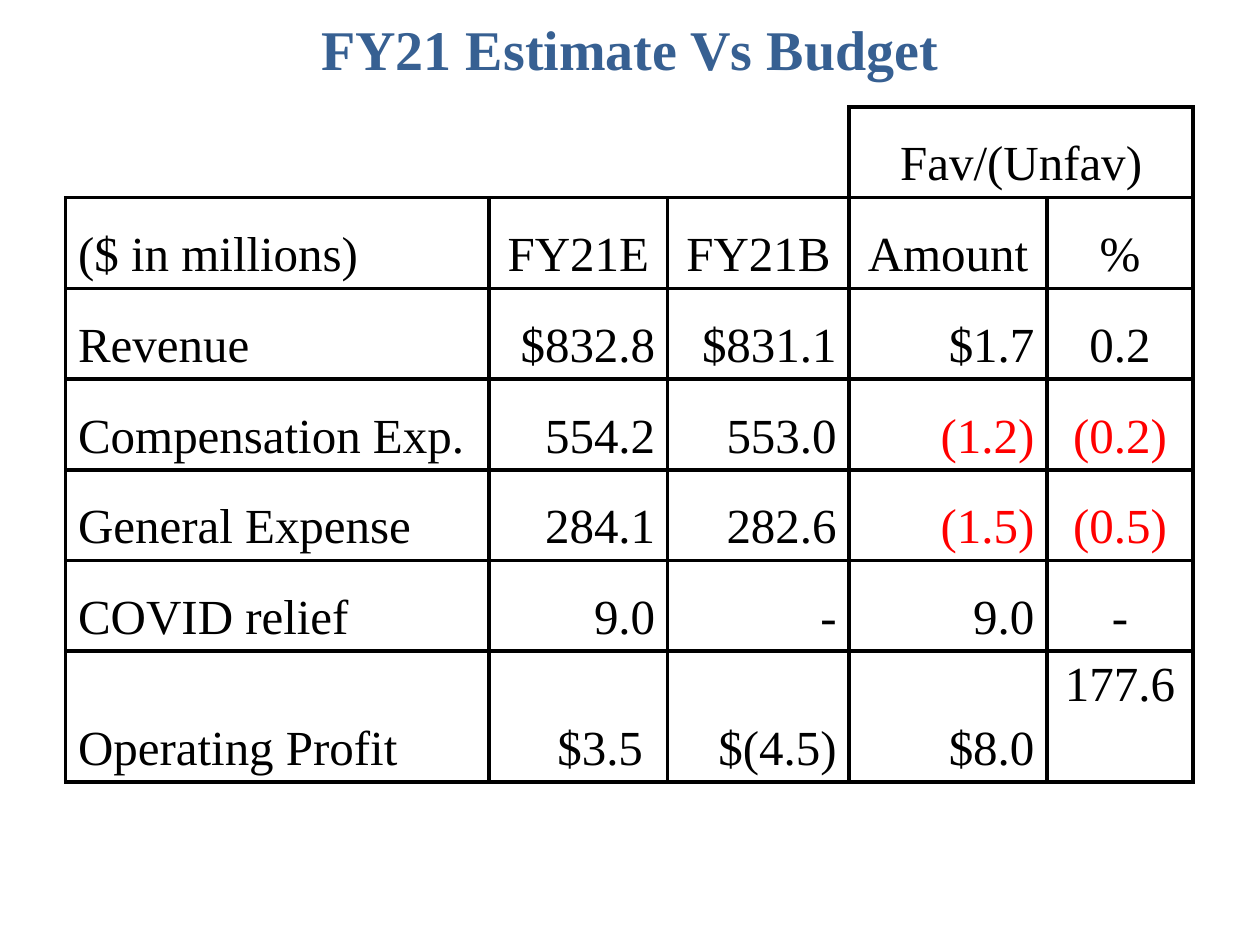
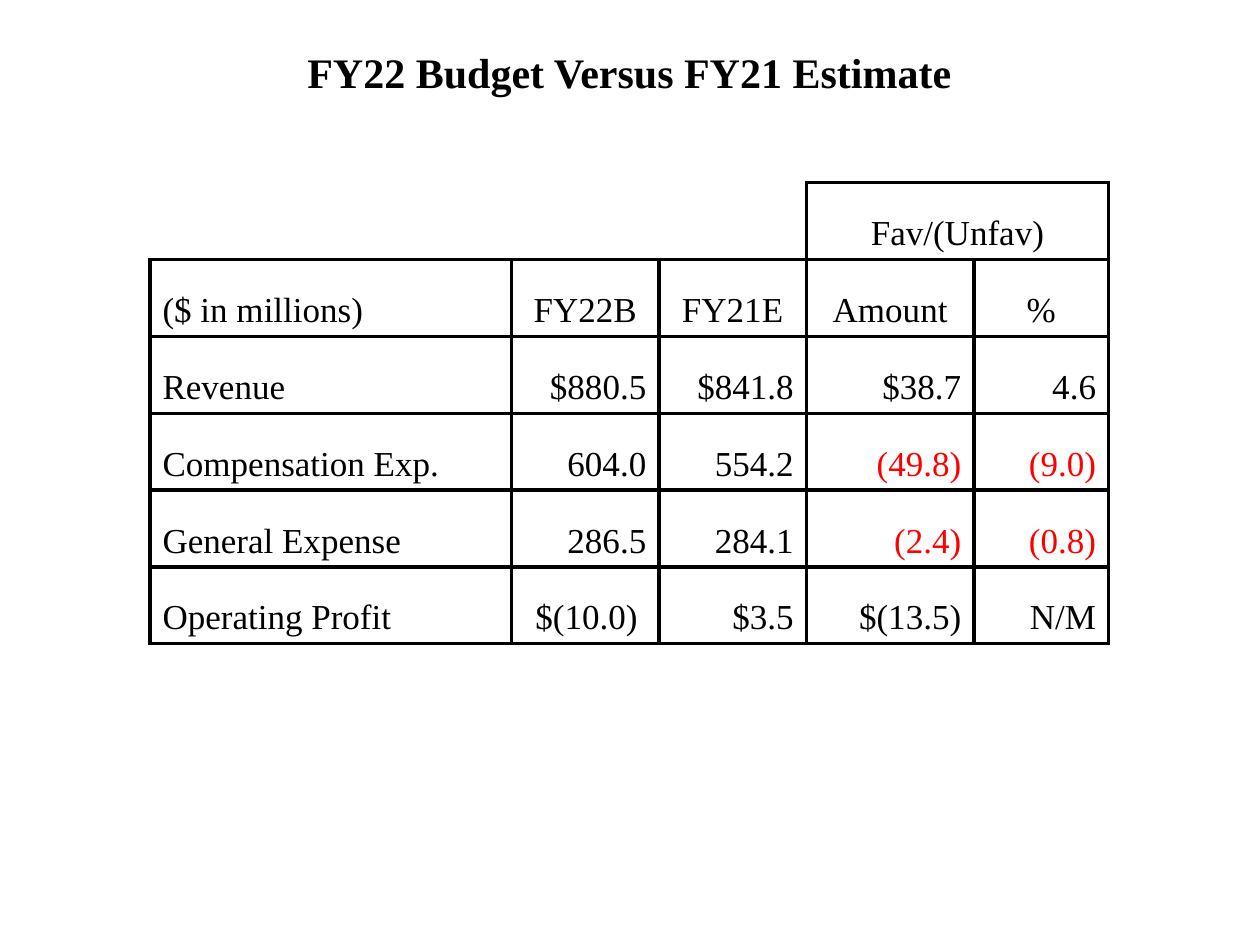
from lxml import etree
from pptx import Presentation
from pptx.dml.color import RGBColor
from pptx.enum.text import MSO_ANCHOR, MSO_AUTO_SIZE, PP_ALIGN
from pptx.oxml.ns import qn
from pptx.util import Inches, Pt

LEFT, CENTER, RIGHT = PP_ALIGN.LEFT, PP_ALIGN.CENTER, PP_ALIGN.RIGHT
TOP, MIDDLE, BOTTOM = MSO_ANCHOR.TOP, MSO_ANCHOR.MIDDLE, MSO_ANCHOR.BOTTOM
NO_AUTOFIT = MSO_AUTO_SIZE.NONE

COLORS = {"blue": "376092", "black": "000000", "red": "FF0000"}
FONT = "Times New Roman"
BORDER = Pt(2.25)
TITLE_ONLY = 5
HEADER_ROWS = 2
VARIANCE_COL = 3  # first column under the Fav/(Unfav) heading
HEADING = ["", "", "", "Fav/(Unfav)", ""]


def set_attributes(target, values):
    for name, value in values.items():
        setattr(target, name, value)


def write_text(frame, text, size, color, align, bold=False):
    para = frame.paragraphs[0]
    para.alignment = align
    span = para.add_run()
    span.text = text
    set_attributes(span.font, {"name": FONT, "size": Pt(size), "bold": bold})
    span.font.color.rgb = RGBColor.from_string(COLORS[color])


def add_title(page, text, box, size, color):
    title = page.shapes.title
    left, top, width, height = map(Inches, box)
    set_attributes(title, {"left": left, "top": top, "width": width, "height": height})
    frame = title.text_frame
    set_attributes(frame, {"word_wrap": False, "auto_size": NO_AUTOFIT,
                           "vertical_anchor": MIDDLE})
    write_text(frame, text, size, color, CENTER, bold=True)


def set_borders(cell, visible_sides):
    """Draw the named sides (L, R, T, B) and clear the others."""
    properties = cell._tc.get_or_add_tcPr()
    for side in "LRTB":
        line = etree.SubElement(properties, qn(f"a:ln{side}"), w=str(BORDER))
        if side in visible_sides:
            fill = etree.SubElement(line, qn("a:solidFill"))
            etree.SubElement(fill, qn("a:srgbClr"), val=COLORS["black"])
        else:
            etree.SubElement(line, qn("a:noFill"))


def visible_sides(row, col):
    """The corner left of the variance heading shows only its inner edges."""
    if row > 0 or col >= VARIANCE_COL:
        return "LRTB"
    return "RB" if col == VARIANCE_COL - 1 else "B"


def add_budget_table(page, rows, origin, col_widths, row_heights, size, percent_align):
    rows = [HEADING] + rows
    left, top = map(Inches, origin)
    holder = page.shapes.add_table(len(rows), len(col_widths), left, top,
                                   Inches(sum(col_widths)), Inches(sum(row_heights)))
    table = holder.table
    set_attributes(table, {"first_row": False, "horz_banding": False})
    for column, width in zip(table.columns, col_widths):
        column.width = Inches(width)
    for table_row, height in zip(table.rows, row_heights):
        table_row.height = Inches(height)

    aligns = [LEFT, RIGHT, RIGHT, RIGHT, percent_align]
    for row, texts in enumerate(rows):
        for col, text in enumerate(texts):
            cell = table.cell(row, col)
            set_borders(cell, visible_sides(row, col))
            cell.fill.background()
            cell.vertical_anchor = BOTTOM
            if text:
                unfavorable = col >= VARIANCE_COL and text.startswith("(")
                align = CENTER if row < HEADER_ROWS and col > 0 else aligns[col]
                write_text(cell.text_frame, text, size,
                           "red" if unfavorable else "black", align)
    table.cell(0, VARIANCE_COL).merge(table.cell(0, VARIANCE_COL + 1))

    # The first operating profit figure sits one space in from the edge
    table.cell(len(rows) - 1, 1).margin_right = Inches(0.1) + Pt(size / 4)
    return table


def build_estimate_page(deck):
    page = deck.slides.add_slide(deck.slide_layouts[TITLE_ONLY])
    add_title(page, "FY21 Estimate Vs Budget", (2.43, 0.06, 5.14, 0.64), 32, "blue")
    rows = [
        ["($ in millions)", "FY21E", "FY21B", "Amount", "%"],
        ["Revenue", "$832.8", "$831.1", "$1.7", "0.2"],
        ["Compensation Exp.", "554.2", "553.0", "(1.2)", "(0.2)"],
        ["General Expense", "284.1", "282.6", "(1.5)", "(0.5)"],
        ["COVID relief", "9.0", "-", "9.0", "-"],
        ["Operating Profit", "$3.5", "$(4.5)", "$8.0", "177.6"],
    ]
    table = add_budget_table(page, rows, (0.52, 0.85), [3.36, 1.42, 1.44, 1.57, 1.16],
                             [0.72] * len(rows) + [1.04], 28, CENTER)
    table.cell(len(rows), 4).vertical_anchor = TOP


def build_budget_page(deck):
    page = deck.slides.add_slide(deck.slide_layouts[TITLE_ONLY])
    add_title(page, "FY22 Budget Versus FY21 Estimate", (2.23, 0.32, 5.53, 0.5),
              24, "black")
    rows = [
        ["($ in millions)", "FY22B", "FY21E", "Amount", "%"],
        ["Revenue", "$880.5", "$841.8", "$38.7", "4.6"],
        ["Compensation Exp.", "604.0", "554.2", "(49.8)", "(9.0)"],
        ["General Expense", "286.5", "284.1", "(2.4)", "(0.8)"],
        ["Operating Profit", "$(10.0)", "$3.5", "$(13.5)", "N/M"],
    ]
    add_budget_table(page, rows, (1.19, 1.45), [2.87, 1.17, 1.17, 1.33, 1.07],
                     [0.61] * (len(rows) + 1), 20, RIGHT)


def main():
    deck = Presentation()
    set_attributes(deck, {"slide_width": Inches(10), "slide_height": Inches(7.5)})
    build_estimate_page(deck)
    build_budget_page(deck)
    deck.save("out.pptx")


if __name__ == "__main__":
    main()
